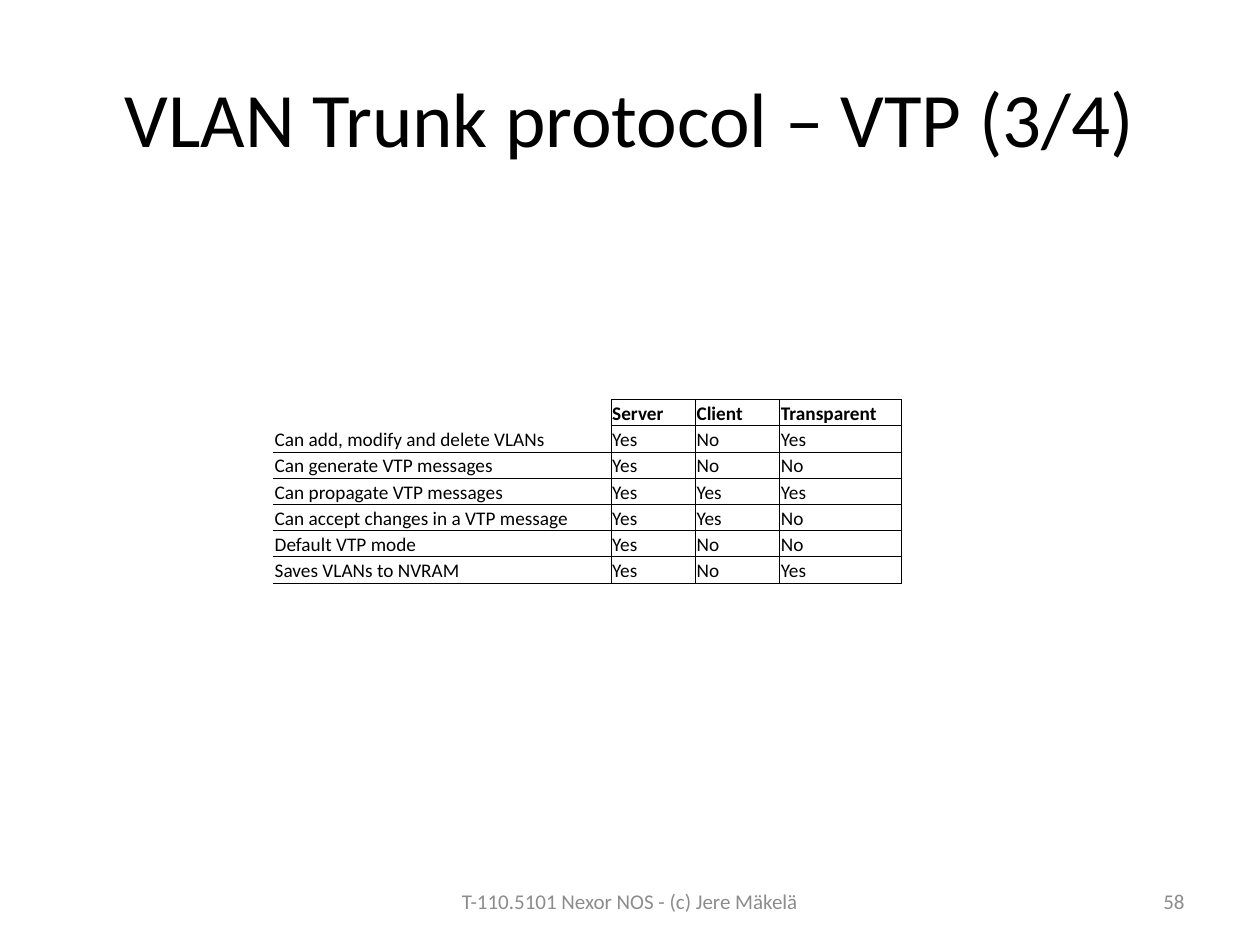
import pptx
import pptx.util
import pptx.dml.color
import pptx.enum.text
import pptx.oxml
from pptx.oxml.ns import qn
from lxml import etree

Inches, Pt = pptx.util.Inches, pptx.util.Pt
RGBColor = pptx.dml.color.RGBColor
ALIGN, ANCHOR = pptx.enum.text.PP_ALIGN, pptx.enum.text.MSO_ANCHOR

BLACK = RGBColor(0, 0, 0)
GREY = RGBColor(0x8C, 0x8C, 0x8C)
FONT = "Calibri"

WIDTH, HEIGHT = 10, 7.5
LABEL_COLS = 4
COL_WIDTHS = [0.67] * 6 + [0.97]
MODES = ["Server", "Client", "Transparent"]
# label, columns the label spans, answer for each mode
FEATURES = [
    ("Can add, modify and delete VLANs", 4, ["Yes", "No", "Yes"]),
    ("Can generate VTP messages", 3, ["Yes", "No", "No"]),
    ("Can propagate VTP messages", 3, ["Yes", "Yes", "Yes"]),
    ("Can accept changes in a VTP message", 4, ["Yes", "Yes", "No"]),
    ("Default VTP mode", 2, ["Yes", "No", "No"]),
    ("Saves VLANs to NVRAM", 3, ["Yes", "No", "Yes"]),
]


def set_font(p, size, color, bold=False):
    p.font.name, p.font.size, p.font.bold = FONT, Pt(size), bold
    p.font.color.rgb = color


def add_text(slide, box, text, size, color, align):
    tf = slide.shapes.add_textbox(*map(Inches, box)).text_frame
    tf.word_wrap = True
    tf.vertical_anchor = ANCHOR.MIDDLE
    p = tf.paragraphs[0]
    p.text, p.alignment = text, align
    set_font(p, size, color)


def set_borders(cell, sides):
    """Rule the given sides (letters from LRTB) and clear the others."""
    tcPr = cell._tc.get_or_add_tcPr()
    for side in "LRTB":
        ln = etree.SubElement(tcPr, qn(f"a:ln{side}"), w=str(Pt(0.5)))
        if side in sides:
            fill = etree.SubElement(ln, qn("a:solidFill"))
            etree.SubElement(fill, qn("a:srgbClr"), val=str(BLACK))
        else:
            etree.SubElement(ln, qn("a:noFill"))


def ruled_sides(row, col, span):
    if col >= LABEL_COLS:
        return "LRTB"
    sides = "R" if LABEL_COLS in (col + 1, col + span) else ""
    return sides + ("T" if row > 1 else "") + ("B" if row > 0 else "")


def add_mode_table(slide, box):
    rows, cols = len(FEATURES) + 1, len(COL_WIDTHS)
    table = slide.shapes.add_table(rows, cols, *map(Inches, box)).table
    table.first_row = table.horz_banding = False
    for column, width in zip(table.columns, COL_WIDTHS):
        column.width = Inches(width)
    for row in table.rows:
        row.height = Inches(box[3] / rows)

    for r, (label, span, answers) in enumerate([("", 1, MODES)] + FEATURES):
        texts = [label] + [""] * (LABEL_COLS - 1) + answers
        for c, text in enumerate(texts):
            cell = table.cell(r, c)
            cell.margin_left = cell.margin_right = cell.margin_top = Inches(0.01)
            cell.margin_bottom = 0
            cell.vertical_anchor = ANCHOR.BOTTOM
            set_borders(cell, ruled_sides(r, c, span if c == 0 else 1))
            cell.fill.background()
            p = cell.text_frame.paragraphs[0]
            if text:
                p.text = text
            set_font(p, 11, BLACK, bold=r == 0)
        if span > 1:
            table.cell(r, 0).merge(table.cell(r, span - 1))


def add_footer(slide, box):
    left, top, width, height = box
    add_text(slide, (left + width * 0.32, top, width * 0.36, height),
             "T-110.5101 Nexor NOS - (c) Jere Mäkelä", 12, GREY, ALIGN.CENTER)
    add_text(slide, (left + width * 0.74, top, width * 0.26, height),
             "58", 12, GREY, ALIGN.RIGHT)


def main():
    prs = pptx.Presentation()
    prs.slide_width, prs.slide_height = Inches(WIDTH), Inches(HEIGHT)
    slide = prs.slides.add_slide(prs.slide_layouts[6])
    margin = WIDTH * 0.05
    inner = WIDTH - 2 * margin
    add_text(slide, (margin, HEIGHT * 0.04, inner, 1.25),
             "VLAN Trunk protocol – VTP (3/4)", 44, BLACK, ALIGN.CENTER)
    add_mode_table(slide, (2.17, 3.17, sum(COL_WIDTHS), 1.46))
    add_footer(slide, (margin, 6.95, inner, 0.4))
    prs.save("out.pptx")


if __name__ == "__main__":
    main()
